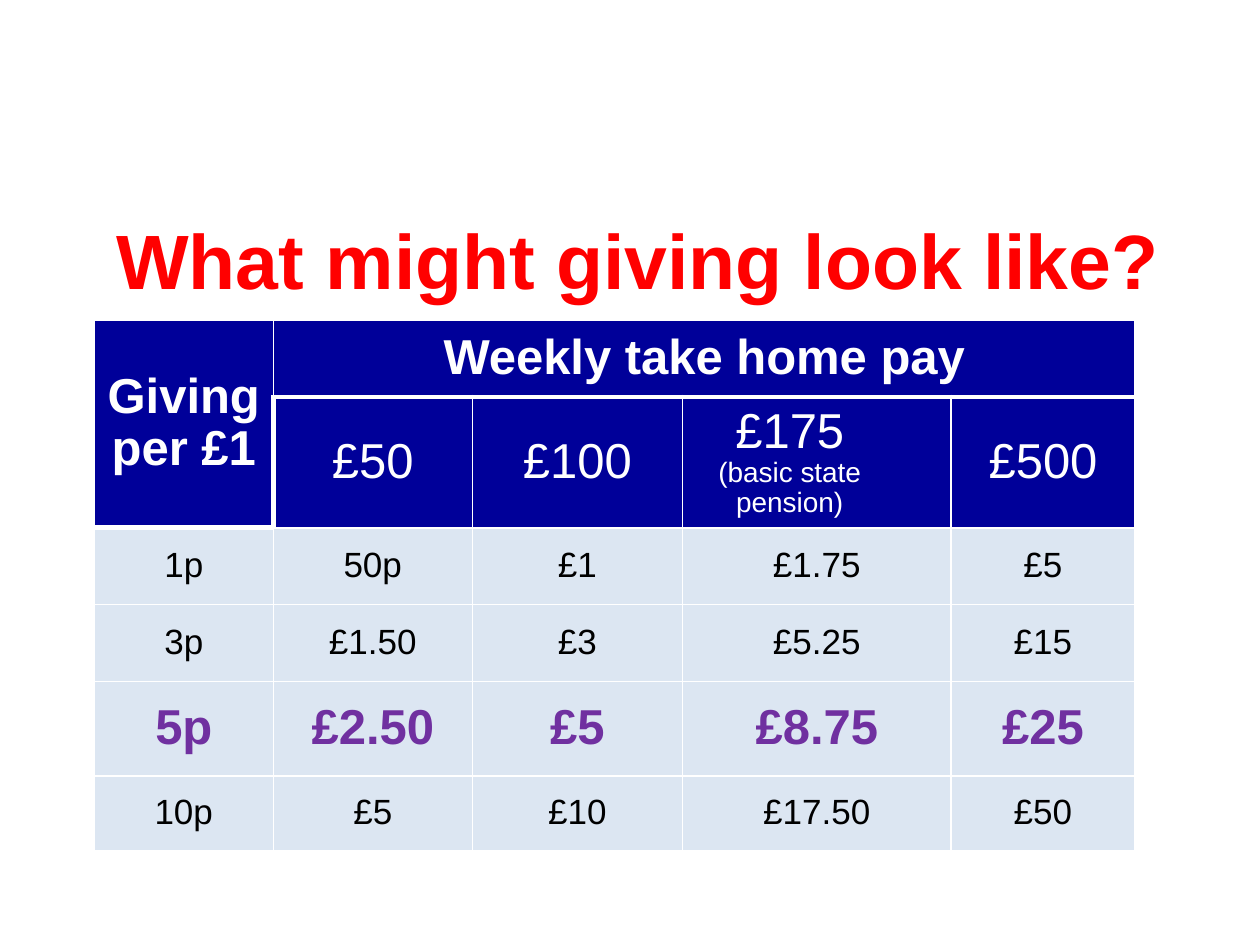
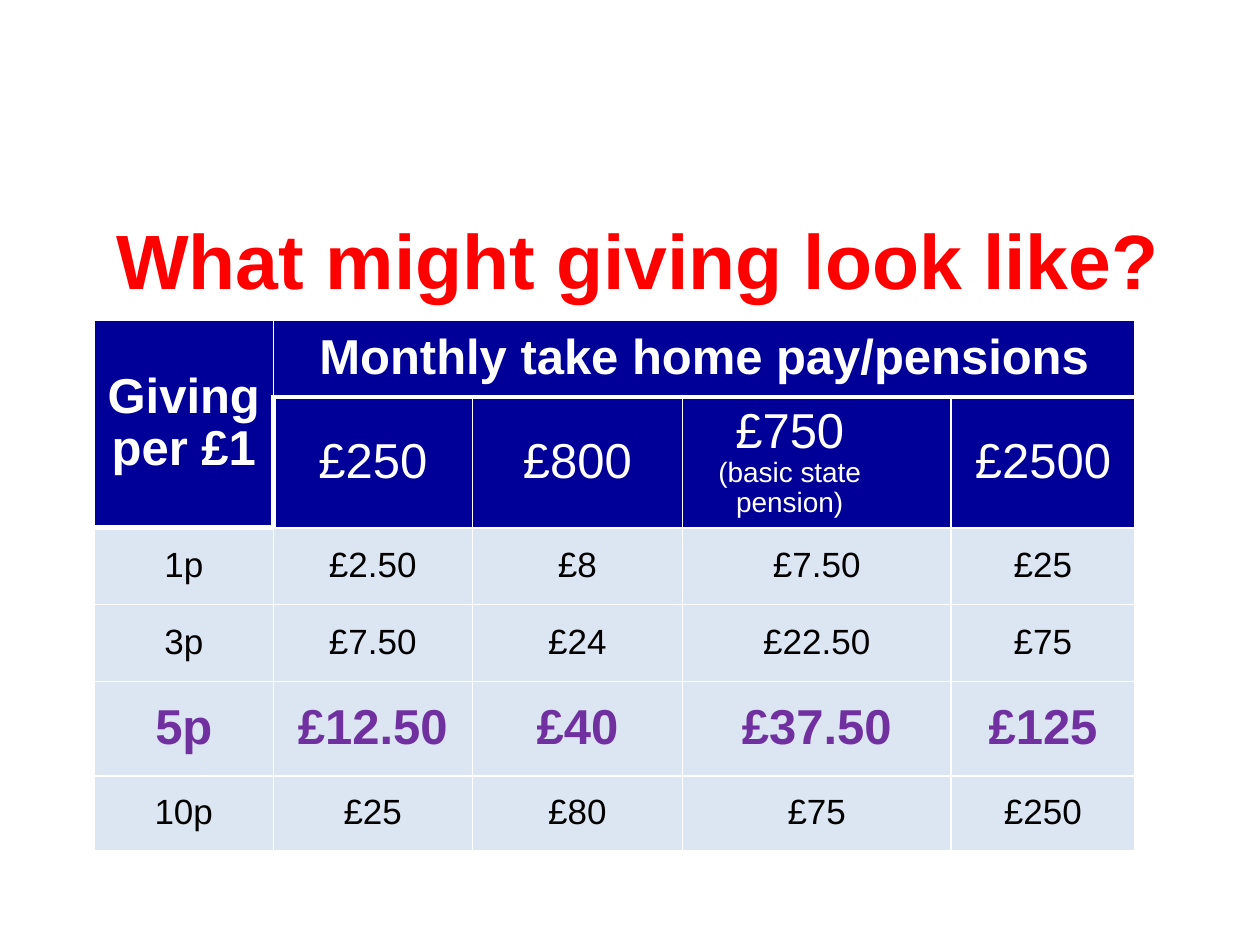
from lxml import etree
from pptx import Presentation
from pptx import util as u
from pptx.dml.color import RGBColor
from pptx.enum import text
from pptx.oxml import ns

FONT = "Arial"
RED, NAVY, PALE, PURPLE = "FF0000", "000099", "DCE6F2", "7030A0"
WHITE, BLACK = "FFFFFF", "000000"
TITLE = "What might giving look like?"
TITLE_BOX = (0.86, 3.63, 24.03, 3.15)
TABLE_BOX = (1.9, 6.45, 20.98, 10.71)
COLUMN_WIDTHS = (3.61, 4.01, 4.24, 5.41, 3.71)
ROW_HEIGHTS = (1.55, 2.64, 1.55, 1.55, 1.9, 1.52)
RATES = (1, 3, 5, 10)
KEY_RATE = 5
PENSION_COLUMN = 3
PENSION_NOTE = "(basic state pension)"
PAGES = (
    ("Weekly take home pay", (50, 100, 175, 500)),
    ("Monthly take home pay/pensions", (250, 800, 750, 2500)),
)


def colour(value):
    return RGBColor.from_string(value)


def write(para, words, size=20, ink=BLACK, bold=False, spacing=0.96, right=0):
    para.alignment = text.PP_ALIGN.CENTER
    para.line_spacing = spacing
    para.space_before = u.Pt(0)
    if right:
        para._p.get_or_add_pPr().set("marR", str(u.Cm(right)))
    span = para.add_run()
    span.text = words
    span.font.name = FONT
    span.font.size = u.Pt(size)
    span.font.bold = bold
    span.font.color.rgb = colour(ink)


def set_borders(cell, **widths):
    properties = cell._tc.get_or_add_tcPr()
    for position, side in enumerate("LRTB"):
        line = etree.Element(ns.qn(f"a:ln{side}"), w=str(u.Pt(widths.get(side, 1))))
        fill = etree.SubElement(line, ns.qn("a:solidFill"))
        etree.SubElement(fill, ns.qn("a:srgbClr"), val=WHITE)
        properties.insert(position, line)


def style_cell(cell, row, column):
    cell.vertical_anchor = text.MSO_ANCHOR.MIDDLE
    cell.fill.solid()
    cell.fill.fore_color.rgb = colour(NAVY if row < 2 else PALE)
    thick = {
        "L": row == 1 and column == 1,
        "T": (row == 1 and column > 0) or (row == 2 and column == 0),
        "B": row == 0 or (row == 1 and column == 0),
    }
    set_borders(cell, **{side: 3 for side, wanted in thick.items() if wanted})


def gift(rate, pay):
    pence = rate * pay
    if pence < 100:
        return f"{pence}p"
    return f"£{pence // 100}" if pence % 100 == 0 else f"£{pence / 100:.2f}"


def add_title(page, box):
    title = page.shapes.title
    title.left, title.top, title.width, title.height = map(u.Cm, box)
    title.text_frame.vertical_anchor = text.MSO_ANCHOR.MIDDLE
    write(title.text_frame.paragraphs[0], TITLE, size=44, ink=RED, bold=True, spacing=1)


def fill_header(table, heading, pays):
    table.cell(0, 0).merge(table.cell(1, 0))
    table.cell(0, 1).merge(table.cell(0, len(pays)))
    for column, words in enumerate(("Giving per £1", heading)):
        write(table.cell(0, column).text_frame.paragraphs[0], words,
              size=28, ink=WHITE, bold=True)
    for column, pay in enumerate(pays, 1):
        frame = table.cell(1, column).text_frame
        is_pension = column == PENSION_COLUMN
        write(frame.paragraphs[0], f"£{pay}", size=28, ink=WHITE,
              right=1.09 if is_pension else 0)
        if is_pension:
            write(frame.add_paragraph(), PENSION_NOTE, size=16, ink=WHITE)


def fill_body(table, pays):
    for row, rate in enumerate(RATES, 2):
        look = dict(size=28, ink=PURPLE, bold=True) if rate == KEY_RATE else {}
        for column, words in enumerate([f"{rate}p"] + [gift(rate, pay) for pay in pays]):
            write(table.cell(row, column).text_frame.paragraphs[0], words, **look)


def add_giving_table(page, box, heading, pays):
    table = page.shapes.add_table(len(ROW_HEIGHTS), len(COLUMN_WIDTHS),
                                  *map(u.Cm, box)).table
    for column, width in zip(table.columns, COLUMN_WIDTHS):
        column.width = u.Cm(width)
    for row, height in zip(table.rows, ROW_HEIGHTS):
        row.height = u.Cm(height)
    for row in range(len(ROW_HEIGHTS)):
        for column in range(len(COLUMN_WIDTHS)):
            style_cell(table.cell(row, column), row, column)
    fill_header(table, heading, pays)
    fill_body(table, pays)


def main():
    deck = Presentation()
    deck.slide_width, deck.slide_height = u.Cm(25.4), u.Cm(19.05)
    for heading, pays in PAGES:
        page = deck.slides.add_slide(deck.slide_layouts[5])
        add_title(page, TITLE_BOX)
        add_giving_table(page, TABLE_BOX, heading, pays)
    deck.save("out.pptx")


if __name__ == "__main__":
    main()
